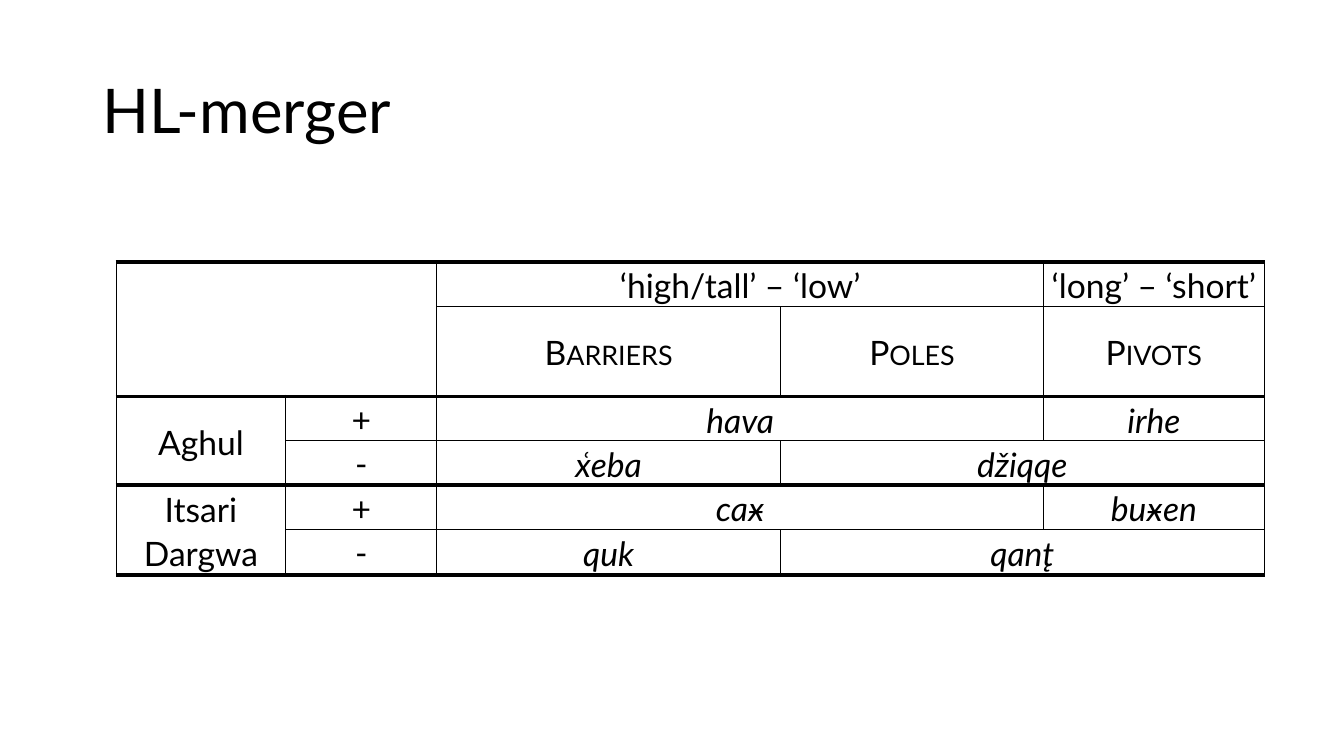
from dataclasses import dataclass

from lxml import etree
from pptx import Presentation
from pptx.dml.color import RGBColor
from pptx.enum.text import MSO_ANCHOR, PP_ALIGN
from pptx.oxml.ns import qn
from pptx.util import Cm, Pt

LEFT, CENTER = PP_ALIGN.LEFT, PP_ALIGN.CENTER
TOP, MIDDLE = MSO_ANCHOR.TOP, MSO_ANCHOR.MIDDLE
TITLE_ONLY = 5
FACE, BLACK = "Lato", "000000"
THIN, THICK = 1, 3

COLS = (4.27, 3.81, 8.66, 6.63, 5.56)
ROWS = (1.12, 2.26, 1.12, 1.12, 1.12, 1.14)
INSETS = {"margin_left": Cm(0.08), "margin_right": Cm(0.08),
          "margin_top": 0, "margin_bottom": 0}


@dataclass
class Entry:
    row: int
    col: int
    text: str
    down: int = 1
    over: int = 1
    italic: bool = False
    small: bool = False
    anchor: MSO_ANCHOR = MIDDLE


def sign(row: int, text: str) -> Entry:
    return Entry(row, 1, text, anchor=TOP)


def word(row: int, col: int, text: str, over: int = 1) -> Entry:
    return Entry(row, col, text, over=over, italic=True)


def lect(row: int, name: str, plus: tuple, minus: tuple) -> list[Entry]:
    """Two rows for one language: plus spans first, minus spans last."""
    return [
        Entry(row, 0, name, down=2),
        sign(row, "+"), word(row, 2, plus[0], 2), word(row, 4, plus[1]),
        sign(row + 1, "-"), word(row + 1, 2, minus[0]),
        word(row + 1, 3, minus[1], 2),
    ]


ENTRIES = [
    Entry(0, 0, "", down=2, over=2),
    Entry(0, 2, "‘high/tall’ – ‘low’", over=2),
    Entry(0, 4, "‘long’ – ‘short’"),
    *(Entry(1, col, name, small=True)
      for col, name in enumerate(("Barriers", "Poles", "Pivots"), 2)),
    *lect(2, "Aghul", ("hava", "irhe"), ("x̜eba", "džiqqe")),
    *lect(4, "Itsari Dargwa", ("caӿ", "buӿen"), ("quk", "qant̨")),
]


def paint(color, code: str) -> None:
    color.rgb = RGBColor.from_string(code)


def write(frame, text: str, size: int, align: PP_ALIGN, gap: float,
          italic: bool = False, small: bool = False) -> None:
    para = frame.paragraphs[0]
    para.alignment, para.line_spacing = align, gap
    run = para.add_run()
    run.text = text
    look = {"name": FACE, "size": Pt(size), "bold": False, "italic": italic}
    for key, value in look.items():
        setattr(run.font, key, value)
    paint(run.font.color, BLACK)
    if small:
        run.font._element.set("cap", "small")


def rule(cell, widths: dict[str, int]) -> None:
    """Put border lines ahead of the cell's fill, as the schema asks."""
    props = cell._tc.get_or_add_tcPr()
    for spot, (side, width) in enumerate(widths.items()):
        line = etree.Element(qn(f"a:{side}"), w=str(Pt(width)))
        fill = etree.SubElement(line, qn("a:solidFill"))
        etree.SubElement(fill, qn("a:srgbClr"), val=BLACK)
        props.insert(spot, line)


def draw(table, entry: Entry) -> None:
    cell = table.cell(entry.row, entry.col)
    last = entry.row + entry.down - 1
    if entry.down * entry.over > 1:
        cell.merge(table.cell(last, entry.col + entry.over - 1))
    cell.vertical_anchor = entry.anchor
    if entry.text:
        write(cell.text_frame, entry.text, 24, CENTER, 1.07,
              entry.italic, entry.small)
    # Rows come in pairs, with a thick line around each pair
    rule(cell, {"lnL": THIN, "lnR": THIN,
                "lnT": THIN if entry.row % 2 else THICK,
                "lnB": THICK if last % 2 else THIN})


def main() -> None:
    deck = Presentation()
    deck.slide_width, deck.slide_height = Cm(33.87), Cm(19.05)
    slide = deck.slides.add_slide(deck.slide_layouts[TITLE_ONLY])

    # Title
    title = slide.shapes.title
    box = {"left": 2.33, "top": 1.01, "width": 29.21, "height": 3.68}
    for key, value in box.items():
        setattr(title, key, Cm(value))
    title.text_frame.vertical_anchor = MIDDLE
    write(title.text_frame, "HL-merger", 44, LEFT, 0.9)

    # Table grid
    table = slide.shapes.add_table(
        len(ROWS), len(COLS), Cm(2.93), Cm(6.61),
        Cm(sum(COLS)), Cm(sum(ROWS))).table
    table.first_row = table.horz_banding = False
    for col, width in zip(table.columns, COLS):
        col.width = Cm(width)
    for row, height in zip(table.rows, ROWS):
        row.height = Cm(height)
    for cell in table.iter_cells():
        cell.fill.background()
        for key, value in INSETS.items():
            setattr(cell, key, value)

    # Table entries
    for entry in ENTRIES:
        draw(table, entry)

    deck.save("out.pptx")


if __name__ == "__main__":
    main()
